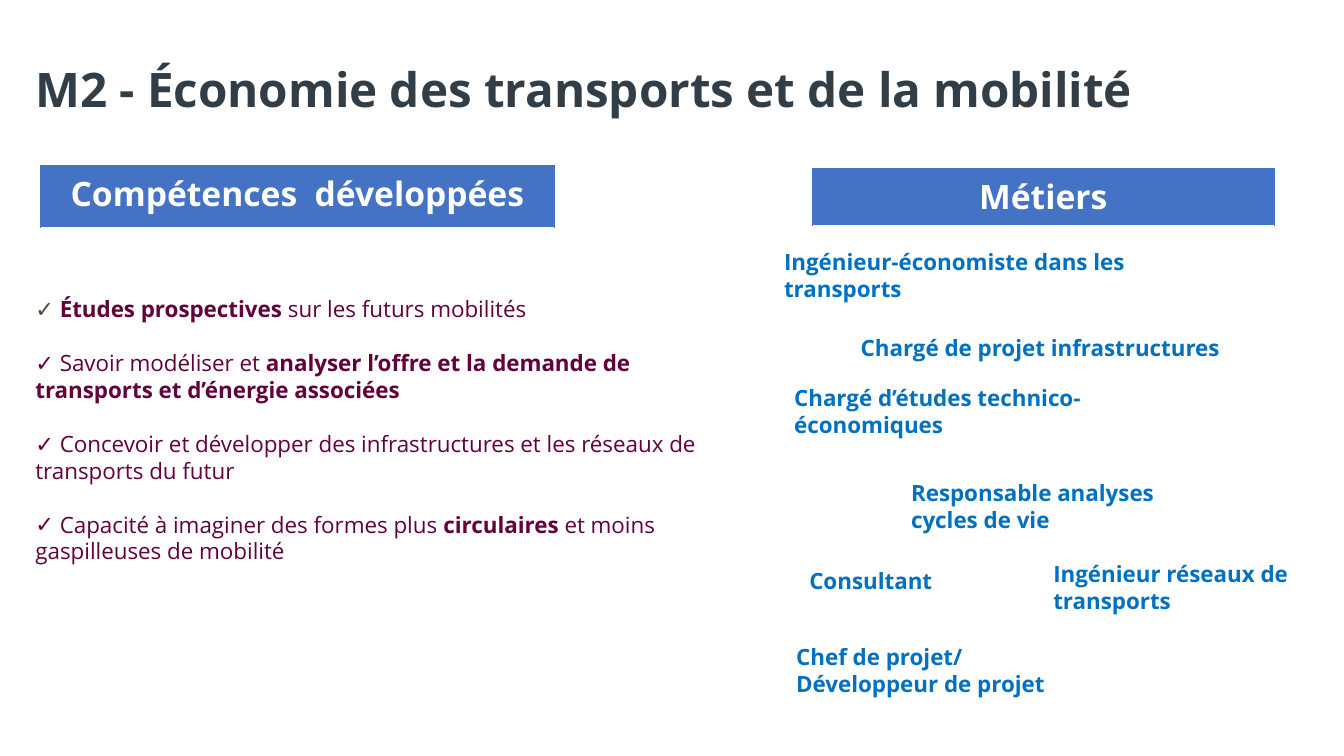
from pptx import Presentation
from pptx import util as u
from pptx.dml.color import RGBColor
from pptx.enum import text
from pptx.oxml import parse_xml
from pptx.oxml.ns import nsdecls

COLORS = {
    "title": "313E48",
    "skill": "63003C",
    "first_check": "4C4C33",
    "job": "0070C0",
    "header": "4472C4",
    "white": "FFFFFF",
}


class SlideBuilder:
    """Places styled elements; lengths are percentages of the slide's size."""

    font_name = "Open Sans"
    text_size = 16
    header_size = 24
    title_size = 34

    def __init__(self, presentation):
        self.width = presentation.slide_width
        self.height = presentation.slide_height
        self.slide = presentation.slides.add_slide(presentation.slide_layouts[1])

    def box(self, left, top, width, height):
        return [round(share * side / 100) for share, side in
                zip((left, top, width, height), (self.width, self.height) * 2)]

    def move(self, shape, *place):
        shape.left, shape.top, shape.width, shape.height = self.box(*place)

    def add_run(self, paragraph, words, size, color, bold=True):
        run = paragraph.add_run()
        run.text = words
        run.font.name = self.font_name
        run.font.size = u.Pt(size)
        run.font.bold = bold
        run.font.color.rgb = RGBColor.from_string(COLORS[color])

    def title(self, words, *place):
        shape = self.slide.shapes.title
        self.move(shape, *place)
        frame = shape.text_frame
        frame.auto_size = text.MSO_AUTO_SIZE.NONE
        frame.vertical_anchor = text.MSO_ANCHOR.BOTTOM
        frame.margin_bottom = u.Inches(0.02)
        paragraph = frame.paragraphs[0]
        paragraph.alignment = text.PP_ALIGN.LEFT
        paragraph.line_spacing = 0.9
        self.add_run(paragraph, words, self.title_size, "title")

    def checklist(self, items, *place):
        shape = self.slide.placeholders[1]
        self.move(shape, *place)
        frame = shape.text_frame
        frame.auto_size = text.MSO_AUTO_SIZE.NONE
        frame.vertical_anchor = text.MSO_ANCHOR.TOP
        for index, runs in enumerate(items):
            paragraph = frame.paragraphs[0] if index == 0 else frame.add_paragraph()
            paragraph.space_before = u.Pt(19.3 if index else 0)
            paragraph.line_spacing = 1.0
            properties = paragraph._p.get_or_add_pPr()
            properties.set("marL", "0")
            properties.set("indent", "0")
            properties.append(parse_xml(
                f'<a:buFont {nsdecls("a")} typeface="{self.font_name}"/>'))
            properties.append(parse_xml(f'<a:buChar {nsdecls("a")} char="✓"/>'))
            for words, color, bold in runs:
                self.add_run(paragraph, words, self.text_size, color, bold)

    def job(self, lines, *place):
        frame = self.slide.shapes.add_textbox(*self.box(*place)).text_frame
        frame.word_wrap = True
        frame.auto_size = text.MSO_AUTO_SIZE.SHAPE_TO_FIT_TEXT
        for index, line in enumerate(lines):
            paragraph = frame.paragraphs[0] if index == 0 else frame.add_paragraph()
            self.add_run(paragraph, line, self.text_size, "job")

    def header(self, words, *place):
        table = self.slide.shapes.add_table(1, 1, *self.box(*place)).table
        cell = table.cell(0, 0)
        cell.fill.solid()
        cell.fill.fore_color.rgb = RGBColor.from_string(COLORS["header"])
        borders = (("L", "header", 0.5), ("R", "header", 0.5),
                   ("T", "header", 0.5), ("B", "white", 1))
        for index, (side, color, points) in enumerate(borders):
            cell._tc.get_or_add_tcPr().insert(index, parse_xml(
                f'<a:ln{side} {nsdecls("a")} w="{u.Pt(points)}"><a:solidFill>'
                f'<a:srgbClr val="{COLORS[color]}"/></a:solidFill></a:ln{side}>'))
        paragraph = cell.text_frame.paragraphs[0]
        paragraph.alignment = text.PP_ALIGN.CENTER
        self.add_run(paragraph, words, self.header_size, "white")


SKILLS = [
    [(" ", "first_check", True), ("Études prospectives ", "skill", True),
     ("sur les futurs mobilités", "skill", False)],
    [(" Savoir modéliser et ", "skill", False),
     ("analyser l’offre et la demande de transports et d’énergie associées",
      "skill", True)],
    [(" Concevoir et développer des infrastructures et les réseaux de "
      "transports du futur", "skill", False)],
    [(" Capacité à imaginer des formes plus ", "skill", False),
     ("circulaires", "skill", True),
     (" et moins gaspilleuses de mobilité", "skill", False)],
]

ONE_LINE, TWO_LINES = 4.93, 8.53
JOBS = [
    (["Ingénieur-économiste dans les transports"], 57.6, 32.13, 28.43, TWO_LINES),
    (["Chargé de projet infrastructures"], 63.3, 43.6, 28.58, ONE_LINE),
    (["Chargé d’études technico-économiques"], 58.35, 50.13, 28.73, TWO_LINES),
    (["Responsable analyses cycles de vie"], 67.05, 62.67, 24.9, TWO_LINES),
    (["Consultant"], 59.48, 74.4, 15.3, ONE_LINE),
    (["Ingénieur réseaux de transports"], 77.63, 73.47, 22.13, TWO_LINES),
    (["Chef de projet/", "Développeur de projet"], 58.5, 84.4, 20.7, TWO_LINES),
]


def main():
    presentation = Presentation()
    presentation.slide_width = u.Inches(13.33)
    presentation.slide_height = u.Inches(7.5)
    builder = SlideBuilder(presentation)

    # Title
    builder.title("M2 - Économie des transports et de la mobilité",
                  1.88, 1.87, 92.2, 14)

    # Skills on the left
    builder.checklist(SKILLS, 1.88, 38.4, 51.01, 40.8)

    # Jobs on the right
    for lines, *place in JOBS:
        builder.job(lines, *place)

    # Column headers
    builder.header("Compétences  développées", 3, 21.87, 38.25, 8.27)
    builder.header("Métiers", 60.45, 22.27, 34.35, 7.6)

    presentation.save("out.pptx")


if __name__ == "__main__":
    main()
